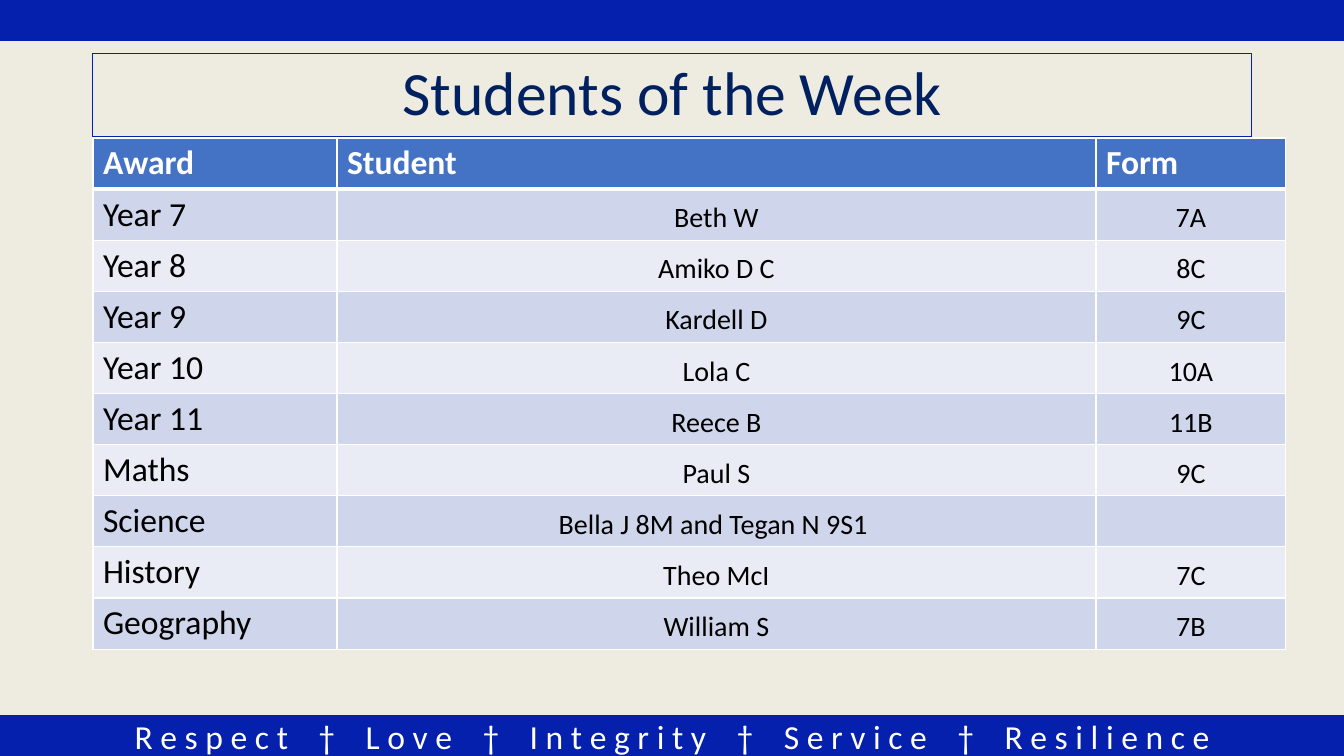
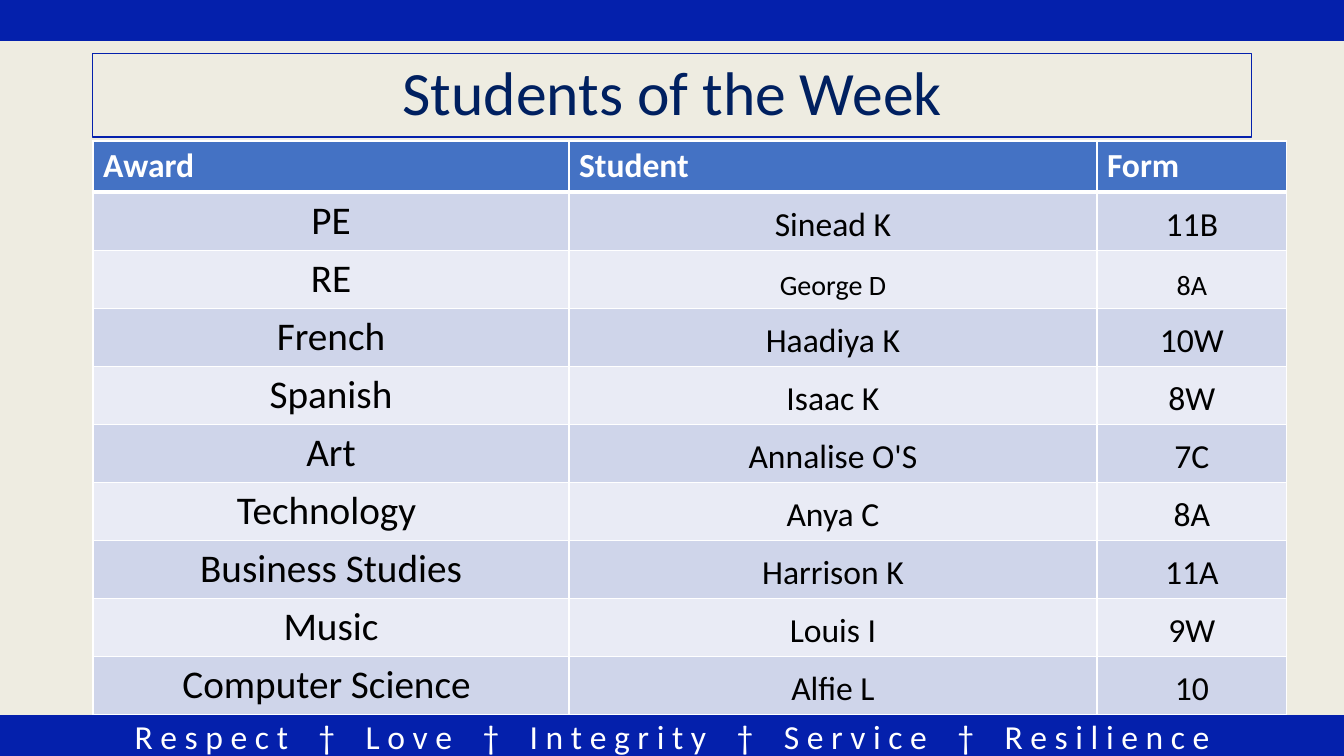
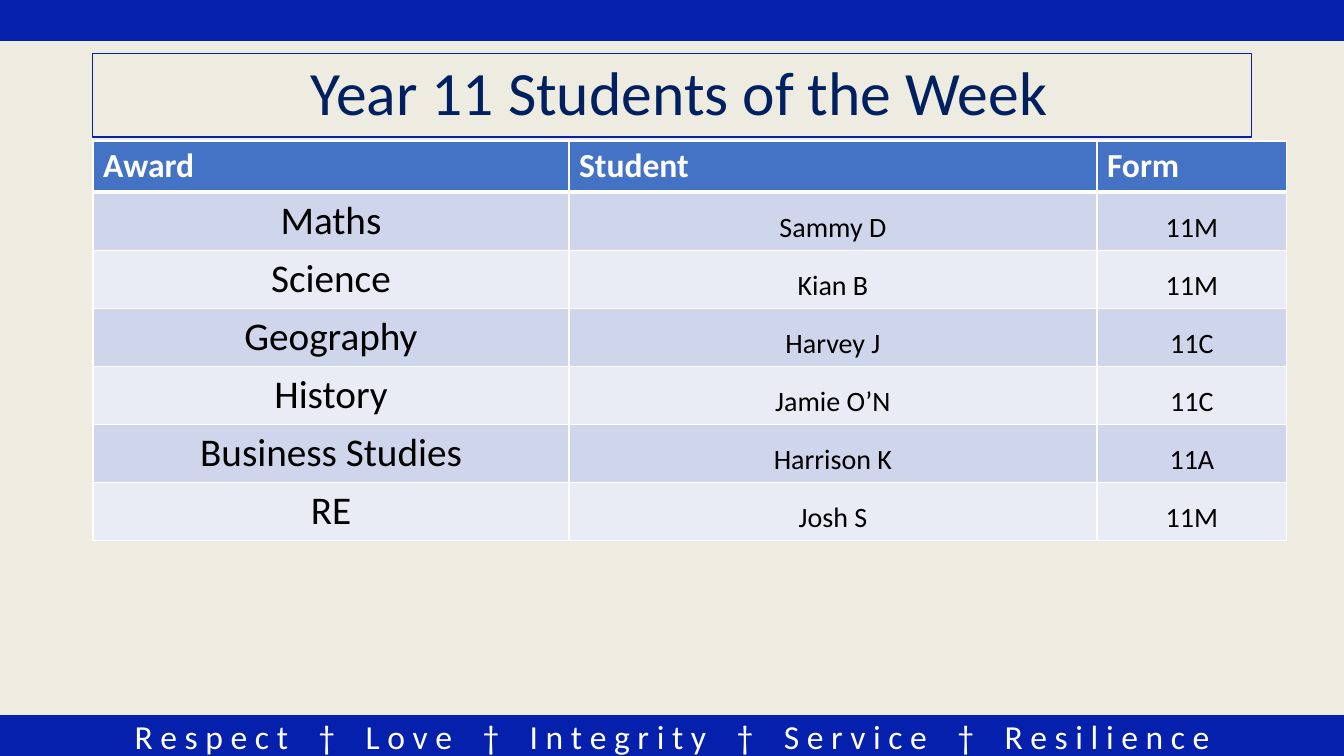
from dataclasses import dataclass
from typing import Any, Optional

from lxml.etree import SubElement
from pptx import Presentation
from pptx.dml.color import RGBColor
from pptx.enum.shapes import MSO_SHAPE
from pptx.enum.text import MSO_ANCHOR, PP_ALIGN
from pptx.oxml.ns import qn
from pptx.util import Emu, Pt

EMU_PER_PX = 914400 / 100.8
SLIDE_W, SLIDE_H = 1344, 756
BAND_H = 40
TABLE_X = 93
HEADER_H = 51

FONT = "Calibri"
BLUE, NAVY, CREAM = "0420AC", "002060", "EEECE1"
WHITE, BLACK = "FFFFFF", "000000"
HEADER_FILL = "4472C4"
ROW_FILLS = ("CFD5EA", "E9EBF5")

HEADINGS = ("Award", "Student", "Form")
VALUES = ("Respect", "Love", "Integrity", "Service", "Resilience")
VALUE_GAP = 1630  # hundredths of a point on each side of a dagger


@dataclass(frozen=True)
class Award:
    subject: str
    student: str
    form: str
    size: Optional[int] = None


@dataclass(frozen=True)
class AwardSlide:
    title: str
    top: int
    columns: tuple[int, int, int]
    row_h: int
    subject_size: int
    subject_align: PP_ALIGN
    student_size: int
    awards: tuple[Award, ...]


WIDE_STUDENT = (244, 759, 190)
WIDE_SUBJECT = (476, 528, 190)

SLIDES = (
    AwardSlide("Students of the Week", 138, WIDE_STUDENT, 51, 24, PP_ALIGN.LEFT, 20, (
        Award("Year 7", "Beth W", "7A"),
        Award("Year 8", "Amiko D C", "8C"),
        Award("Year 9", "Kardell D", "9C"),
        Award("Year 10", "Lola C", "10A"),
        Award("Year 11", "Reece B", "11B"),
        Award("Maths", "Paul S", "9C"),
        Award("Science", "Bella J 8M and Tegan N 9S1 ", ""),
        Award("History", "Theo McI", "7C"),
        Award("Geography", "William S", "7B"),
    )),
    AwardSlide("Students of the Week", 141, WIDE_SUBJECT, 58, 28, PP_ALIGN.CENTER, 24, (
        Award("PE", "Sinead K", "11B"),
        Award("RE", "George D", "8A", size=20),
        Award("French", "Haadiya K", "10W"),
        Award("Spanish", "Isaac K", "8W"),
        Award("Art", "Annalise O'S", "7C"),
        Award("Technology ", "Anya C", "8A"),
        Award("Business Studies", "Harrison K", "11A"),
        Award("Music", "Louis I", "9W"),
        Award("Computer Science ", "Alfie L", "10"),
    )),
    AwardSlide(" Year 11 Students of the Week", 141, WIDE_SUBJECT, 58, 28, PP_ALIGN.CENTER, 20, (
        Award("Maths", "Sammy D", "11M"),
        Award("Science", "Kian B", "11M"),
        Award("Geography", "Harvey J", "11C"),
        Award("History", "Jamie O’N", "11C"),
        Award("Business Studies", "Harrison K", "11A"),
        Award("RE", "Josh S", "11M"),
    )),
)


def px(n: int) -> Emu:
    return Emu(round(n * EMU_PER_PX))


def rgb(color: str) -> RGBColor:
    return RGBColor.from_string(color)


def add_text(p: Any, text: str, *, size: int, color: str = BLACK, bold: bool = False,
             align: PP_ALIGN = PP_ALIGN.CENTER, spacing: int = 0) -> None:
    """Append a run; spacing is in hundredths of a point."""
    p.alignment = align
    p.font.size = Pt(size)
    r = p.add_run()
    r.text = text
    r.font.name = FONT
    r.font.size = Pt(size)
    r.font.bold = bold
    r.font.color.rgb = rgb(color)
    if spacing:
        r.font._element.set("spc", str(spacing))


def add_box(s: Any, x: int, y: int, w: int, h: int, *, fill: Optional[str] = None,
            line_w: float = 1) -> Any:
    sp = s.shapes.add_shape(MSO_SHAPE.RECTANGLE, px(x), px(y), px(w), px(h))
    sp.shadow.inherit = False
    if fill:
        sp.fill.solid()
        sp.fill.fore_color.rgb = rgb(fill)
    else:
        sp.fill.background()
    sp.line.color.rgb = rgb(BLUE)
    sp.line.width = Pt(line_w)
    sp.text_frame.word_wrap = True
    sp.text_frame.vertical_anchor = MSO_ANCHOR.MIDDLE
    return sp


def add_frame(s: Any, title: str) -> None:
    """Draw the bands, the letter-spaced values and the title."""
    footer = add_box(s, 0, SLIDE_H - BAND_H, SLIDE_W, BAND_H, fill=BLUE)
    p = footer.text_frame.paragraphs[0]
    for i, value in enumerate(VALUES):
        if i:
            for text, gap in ((" ", VALUE_GAP), ("†", 0), (" ", VALUE_GAP)):
                add_text(p, text, size=24, color=WHITE, spacing=gap)
        add_text(p, " ".join(value), size=24, color=WHITE)
    add_box(s, 0, 0, SLIDE_W, BAND_H, fill=BLUE)
    heading = add_box(s, TABLE_X, 53, 1159, 84, line_w=0.75)
    p = heading.text_frame.paragraphs[0]
    p.line_spacing = 0.9
    add_text(p, title, size=44, color=NAVY)


def style_cell(cell: Any, fill: str, top: int = 1, bottom: int = 1) -> None:
    """Set the fill and the white borders, with widths in points."""
    tc_pr = cell._tc.get_or_add_tcPr()
    for side, width in (("L", 1), ("R", 1), ("T", top), ("B", bottom)):
        ln = SubElement(tc_pr, qn(f"a:ln{side}"), w=str(Pt(width)))
        SubElement(SubElement(ln, qn("a:solidFill")), qn("a:srgbClr"), val=WHITE)
    cell.fill.solid()
    cell.fill.fore_color.rgb = rgb(fill)


def add_awards(s: Any, page: AwardSlide) -> None:
    n = len(page.awards)
    table = s.shapes.add_table(
        n + 1, len(HEADINGS), px(TABLE_X), px(page.top),
        px(sum(page.columns)), px(HEADER_H + n * page.row_h)).table
    for column, width in zip(table.columns, page.columns):
        column.width = px(width)
    for i, row in enumerate(table.rows):
        row.height = px(page.row_h if i else HEADER_H)

    for col, text in enumerate(HEADINGS):
        cell = table.cell(0, col)
        style_cell(cell, HEADER_FILL, bottom=3)
        add_text(cell.text_frame.paragraphs[0], text, size=24, color=WHITE,
                 bold=True, align=PP_ALIGN.LEFT)

    for i, award in enumerate(page.awards):
        for col, text in enumerate((award.subject, award.student, award.form)):
            cell = table.cell(i + 1, col)
            style_cell(cell, ROW_FILLS[i % 2], top=1 if i else 3)
            p = cell.text_frame.paragraphs[0]
            if col == 0:
                add_text(p, text, size=page.subject_size, align=page.subject_align)
                continue
            cell.vertical_anchor = MSO_ANCHOR.BOTTOM
            cell.margin_left = cell.margin_top = cell.margin_right = px(1)
            cell.margin_bottom = px(5)
            if text:
                add_text(p, text, size=award.size or page.student_size)


def main() -> None:
    prs = Presentation()
    prs.slide_width, prs.slide_height = px(SLIDE_W), px(SLIDE_H)
    background = prs.slide_master.background.fill
    background.solid()
    background.fore_color.rgb = rgb(CREAM)
    for page in SLIDES:
        s = prs.slides.add_slide(prs.slide_layouts[6])
        add_frame(s, page.title)
        add_awards(s, page)
    prs.save("out.pptx")


if __name__ == "__main__":
    main()
